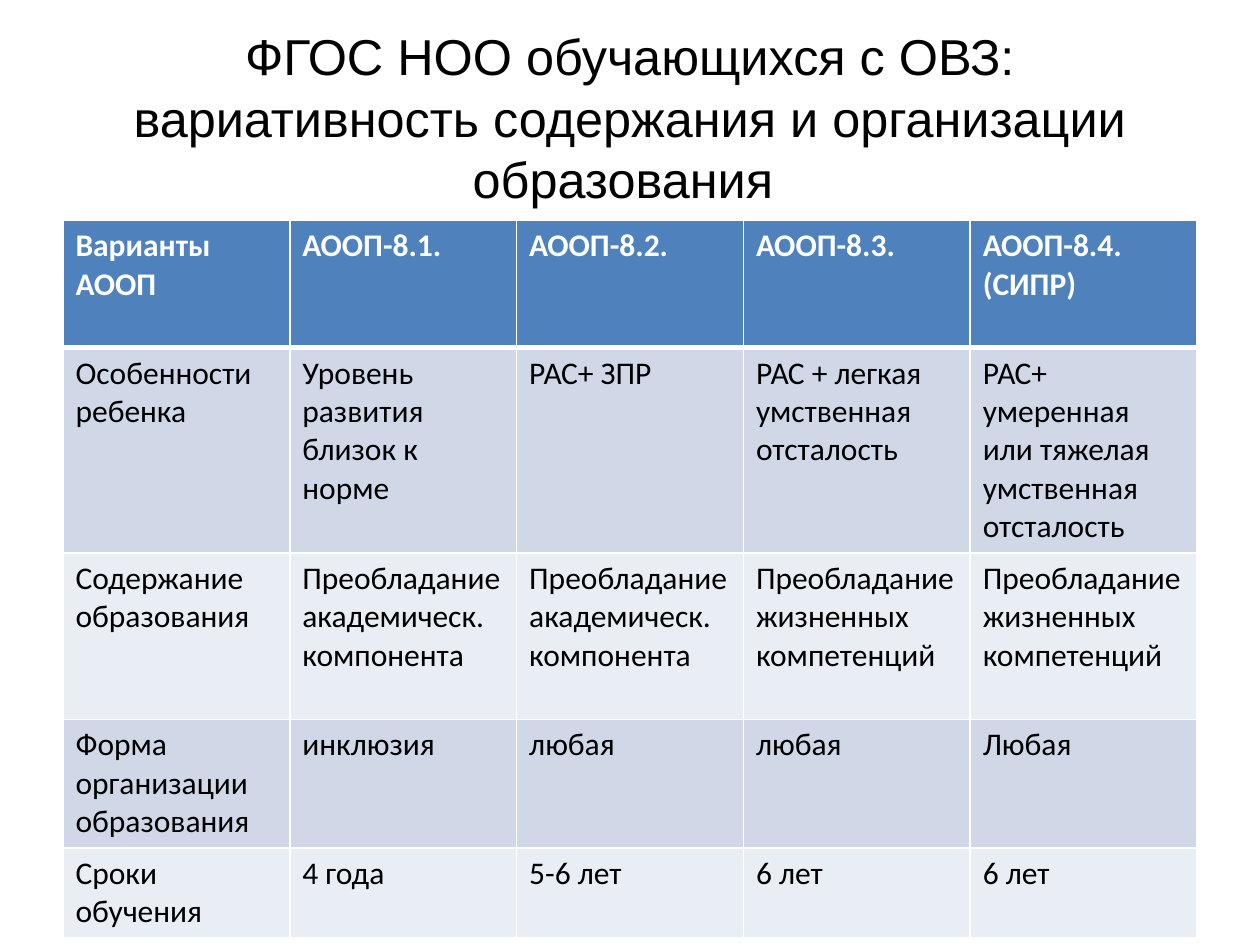
import pptx
import pptx.dml.color
import pptx.enum.text
import pptx.oxml
import pptx.oxml.ns
import pptx.util

RGBColor = pptx.dml.color.RGBColor
BLACK = RGBColor(0x00, 0x00, 0x00)
WHITE = RGBColor(0xFF, 0xFF, 0xFF)
HEADER_BLUE = RGBColor(0x4F, 0x81, 0xBD)
BANDS = (RGBColor(0xD0, 0xD8, 0xE8), RGBColor(0xE9, 0xED, 0xF4))

TITLE = "ФГОС НОО обучающихся с ОВЗ: вариативность содержания и организации образования "
ROWS = [
    ["Варианты АООП", "АООП-8.1.", "АООП-8.2.", "АООП-8.3.", "АООП-8.4.\n(СИПР)"],
    ["Особенности ребенка", "Уровень развития близок к норме", "РАС+ ЗПР",
     "РАС + легкая умственная отсталость",
     "РАС+ умеренная или тяжелая умственная отсталость"],
    ["Содержание образования"] + ["Преобладание академическ. компонента"] * 2
    + ["Преобладание жизненных компетенций"] * 2,
    ["Форма организации образования", "инклюзия", "любая", "любая", "Любая"],
    ["Сроки обучения", "4 года", "5-6 лет", "6 лет", "6 лет"],
]
ROW_HEIGHTS = [1.01, 1.63, 1.32, 1.02, 0.71]  # inches


class SlideBuilder:
    """Holds the style and the current slide; lengths are shares of the slide."""

    title_font, title_size, title_leading = "Arial", 28.8, 35
    table_font, table_size = "Calibri", 18

    def __init__(self, presentation):
        self.width = presentation.slide_width
        self.height = presentation.slide_height
        self.slide = presentation.slides.add_slide(presentation.slide_layouts[6])

    def box(self, left, top, width, height):
        return (int(left * self.width), int(top * self.height),
                int(width * self.width), int(height * self.height))

    def style(self, paragraph, name, size, color, bold=False):
        font = paragraph.font
        font.name, font.size, font.bold = name, pptx.util.Pt(size), bold
        font.color.rgb = color

    def title(self, text, *area):
        frame = self.slide.shapes.add_textbox(*self.box(*area)).text_frame
        frame.word_wrap = True
        frame.vertical_anchor = pptx.enum.text.MSO_ANCHOR.MIDDLE
        paragraph = frame.paragraphs[0]
        paragraph.text = text
        paragraph.alignment = pptx.enum.text.PP_ALIGN.CENTER
        paragraph.line_spacing = pptx.util.Pt(self.title_leading)
        self.style(paragraph, self.title_font, self.title_size, BLACK)

    def borders(self, cell, top, bottom):
        properties = cell._tc.get_or_add_tcPr()
        sides = (("lnL", 1), ("lnR", 1), ("lnT", top), ("lnB", bottom))
        for position, (side, points) in enumerate(sides):
            line = pptx.oxml.parse_xml(
                f'<a:{side} {pptx.oxml.ns.nsdecls("a")} w="{pptx.util.Pt(points)}">'
                f'<a:solidFill><a:srgbClr val="{WHITE}"/></a:solidFill></a:{side}>')
            properties.insert(position, line)

    def table(self, rows, heights, *area):
        table = self.slide.shapes.add_table(
            len(rows), len(rows[0]), *self.box(*area)).table
        for row_index, (texts, height) in enumerate(zip(rows, heights)):
            table.rows[row_index].height = pptx.util.Inches(height)
            header = row_index == 0
            for column_index, text in enumerate(texts):
                cell = table.cell(row_index, column_index)
                cell.text = text
                cell.fill.solid()
                cell.fill.fore_color.rgb = (
                    HEADER_BLUE if header else BANDS[(row_index - 1) % 2])
                for paragraph in cell.text_frame.paragraphs:
                    self.style(paragraph, self.table_font, self.table_size,
                               WHITE if header else BLACK, header)
                # A thick line parts the header from the body
                self.borders(cell, 3 if row_index == 1 else 1, 3 if header else 1)


def main():
    presentation = pptx.Presentation()
    presentation.slide_width = pptx.util.Inches(10)
    presentation.slide_height = pptx.util.Inches(7.5)
    builder = SlideBuilder(presentation)

    # Heading
    builder.title(TITLE, 0.05, 0.04, 0.9, 1 / 6)
    # Comparison of the programme variants
    builder.table(ROWS, ROW_HEIGHTS, 0.05, 1.75 / 7.5, 0.9, sum(ROW_HEIGHTS) / 7.5)

    presentation.save("out.pptx")


if __name__ == "__main__":
    main()
